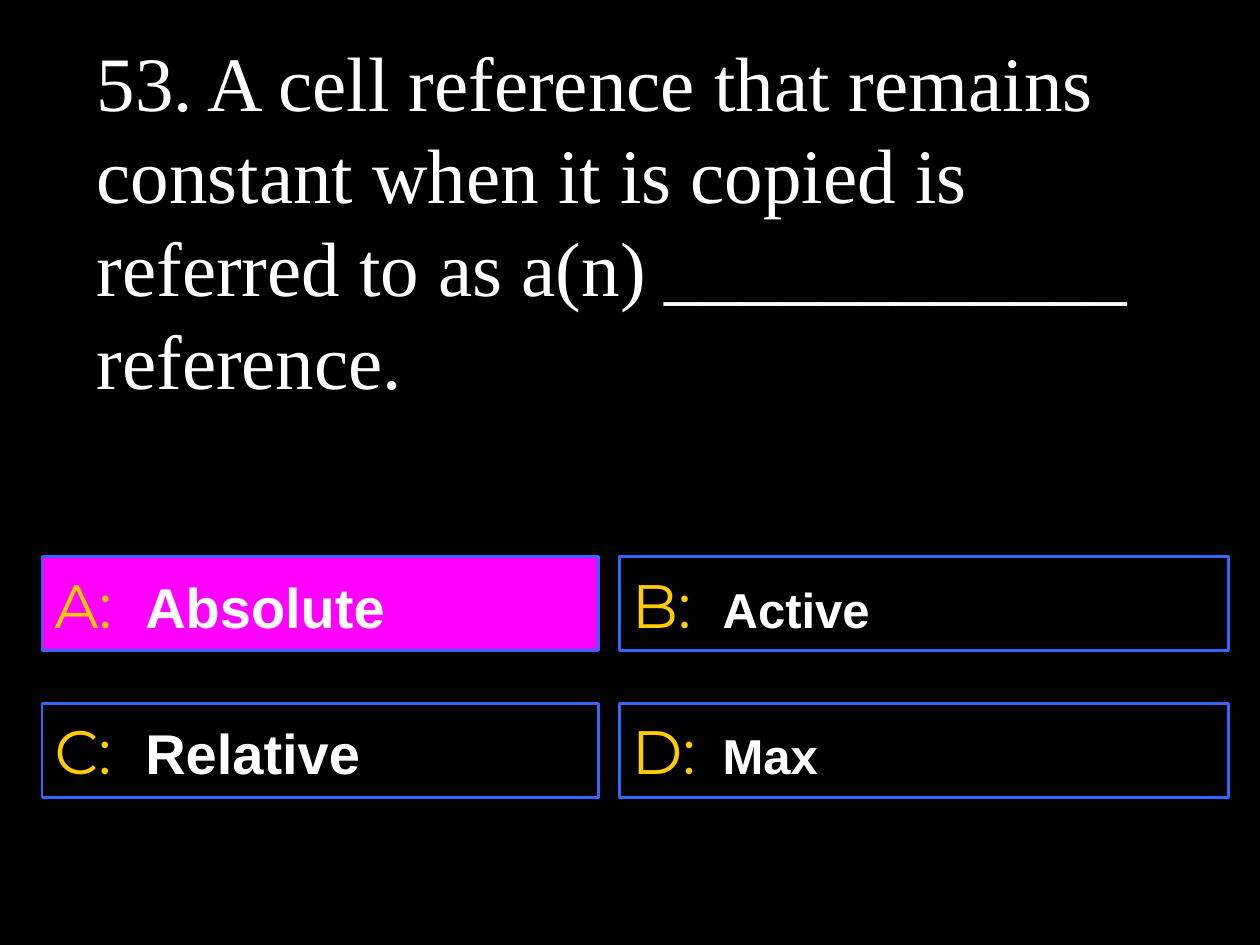
"""Build a quiz slide with one question and four answer boxes."""
import pptx
import pptx.dml.color
import pptx.enum.shapes
import pptx.enum.text
import pptx.oxml
import pptx.oxml.ns
import pptx.util

Cm, Pt = pptx.util.Cm, pptx.util.Pt

QUESTION = ("53. A cell reference that remains constant when it is copied is "
            "referred to as a(n) ____________ reference.")
ANSWERS = [
    [("A:", "Absolute", True), ("B:", "Active", False)],
    [("C:", "Relative", False), ("D:", "Max", False)],
]
COLUMNS = [
    {"left": 0.85, "width": 11.22, "size": 32},
    {"left": 12.49, "width": 12.28, "size": 28},
]
FIRST_TOP, ROW_STEP, BOX_HEIGHT = 11.22, 2.96, 1.9
ANSWER_TAB = 1.83

THEME = {
    "background": "000000",
    "text": "FFFFFF",
    "letter": "FFCC00",
    "border": "3366FF",
    "chosen": "FF00FF",
    "question_font": "Times New Roman",
    "letter_font": "Montserrat",
    "answer_font": "Arial",
    "question_size": 44,
    "question_spacing": 53,
    "letter_size": 35,
    "border_width": 1.5,
}


def color(name):
    """Return a theme colour."""
    return pptx.dml.color.RGBColor.from_string(THEME[name])


def add_text(paragraph, text, *, font, size, fill, bold=False):
    """Append one formatted run to a paragraph."""
    run = paragraph.add_run()
    run.text = text
    run.font.name = THEME[font]
    run.font.size = Pt(size)
    run.font.bold = bold
    run.font.color.rgb = color(fill)


def add_tab_stop(paragraph, position):
    """Give a paragraph one left tab stop."""
    namespace = pptx.oxml.ns.nsdecls("a")
    paragraph._p.get_or_add_pPr().append(pptx.oxml.parse_xml(
        f'<a:tabLst {namespace}><a:tab pos="{int(Cm(position))}" algn="l"/></a:tabLst>'))


def add_question(slide):
    """Add the question text."""
    box = slide.shapes.add_textbox(Cm(1.7), Cm(0.68), Cm(21.59), Cm(7.5))
    frame = box.text_frame
    frame.word_wrap = True
    frame.margin_top = frame.margin_bottom = 0
    paragraph = frame.paragraphs[0]
    paragraph.line_spacing = Pt(THEME["question_spacing"])
    add_text(paragraph, QUESTION, font="question_font",
             size=THEME["question_size"], fill="text")


def add_answer(slide, column, top, letter, answer, chosen):
    """Add one bordered answer box."""
    shape = slide.shapes.add_shape(
        pptx.enum.shapes.MSO_SHAPE.RECTANGLE,
        Cm(column["left"]), Cm(top), Cm(column["width"]), Cm(BOX_HEIGHT))
    shape.shadow.inherit = False
    if chosen:
        shape.fill.solid()
        shape.fill.fore_color.rgb = color("chosen")
    else:
        shape.fill.background()
    shape.line.color.rgb = color("border")
    shape.line.width = Pt(THEME["border_width"])
    frame = shape.text_frame
    frame.word_wrap = True
    frame.vertical_anchor = pptx.enum.text.MSO_ANCHOR.MIDDLE
    paragraph = frame.paragraphs[0]
    paragraph.alignment = pptx.enum.text.PP_ALIGN.LEFT
    add_tab_stop(paragraph, ANSWER_TAB)
    add_text(paragraph, f"{letter}\t", font="letter_font",
             size=THEME["letter_size"], fill="letter")
    add_text(paragraph, answer, font="answer_font",
             size=column["size"], fill="text", bold=True)


def main():
    """Build and save the presentation."""
    presentation = pptx.Presentation()
    presentation.slide_width, presentation.slide_height = Cm(25.4), Cm(19.05)
    slide = presentation.slides.add_slide(presentation.slide_layouts[6])
    slide.background.fill.solid()
    slide.background.fill.fore_color.rgb = color("background")
    add_question(slide)
    for index, row in enumerate(ANSWERS):
        for column, answer in zip(COLUMNS, row):
            add_answer(slide, column, FIRST_TOP + index * ROW_STEP, *answer)
    presentation.save("out.pptx")


if __name__ == "__main__":
    main()
